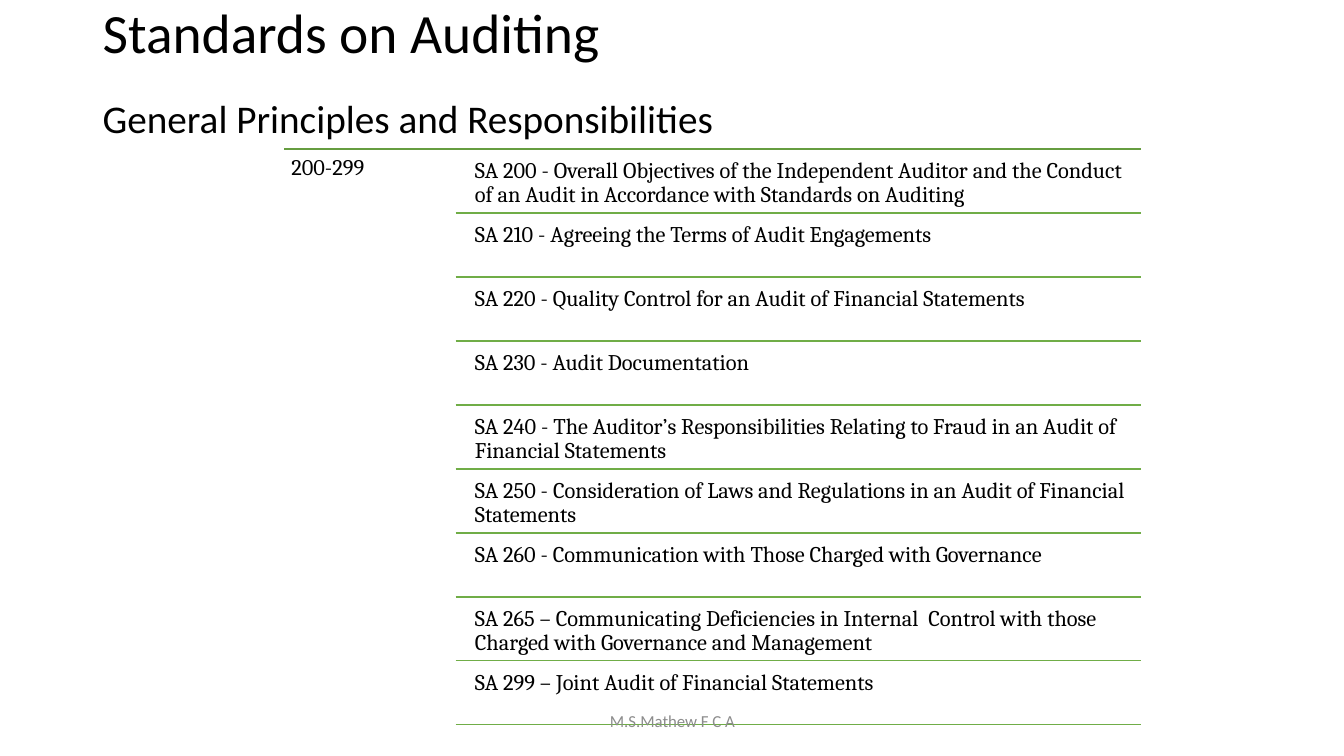
"""Build the slide listing the 200-299 Standards on Auditing."""
from dataclasses import dataclass

from lxml import etree
from pptx import Presentation
from pptx.dml.color import RGBColor
from pptx.enum.shapes import MSO_CONNECTOR
from pptx.enum.text import MSO_ANCHOR, PP_ALIGN
from pptx.oxml.ns import qn
from pptx.util import Emu, Pt

TITLE = "Standards on Auditing"
SUBTITLE = "General Principles and Responsibilities"
SERIES = "200-299"
STANDARDS = [
    "SA 200 - Overall Objectives of the Independent Auditor and the Conduct of an Audit "
    "in Accordance with Standards on Auditing",
    "SA 210 - Agreeing the Terms of Audit Engagements",
    "SA 220 - Quality Control for an Audit of Financial Statements",
    "SA 230 - Audit Documentation",
    "SA 240 - The Auditor’s Responsibilities Relating to Fraud in an Audit of Financial Statements",
    "SA 250 - Consideration of Laws and Regulations in an Audit of Financial Statements",
    "SA 260 - Communication with Those Charged with Governance",
    "SA 265 – Communicating Deficiencies in Internal  Control with those Charged with "
    "Governance and Management",
    "SA 299 – Joint Audit of Financial Statements",
]
FOOTER = "M.S.Mathew F C A"

LEFT, CENTER = PP_ALIGN.LEFT, PP_ALIGN.CENTER
TOP, MIDDLE = MSO_ANCHOR.TOP, MSO_ANCHOR.MIDDLE
STRAIGHT = MSO_CONNECTOR.STRAIGHT

EMU_PER_PX = 9144
SLIDE_WIDTH, SLIDE_HEIGHT = 1333, 750
TITLE_BOX = (92, 15, 1150, 41)
SUBTITLE_BOX = (92, 94, 1150, 635)
FOOTER_BOX = (442, 695, 450, 40)
LIST_LEFT, LIST_RIGHT = 282, 1132
LIST_TOP, LIST_BOTTOM = 148, 719
SERIES_WIDTH = 170
STANDARD_INDENT, STANDARD_GAP, STANDARD_HEIGHT = 12, 3, 60
LIST_INSETS = (7, 7)
DEFAULT_INSETS = (10, 5)


@dataclass(frozen=True)
class Theme:
    """Colours, fonts and type sizes."""
    text: RGBColor = RGBColor(0, 0, 0)
    footer: RGBColor = RGBColor(0x8C, 0x8C, 0x8C)
    top_rule: RGBColor = RGBColor(0x66, 0x9D, 0x40)
    rule: RGBColor = RGBColor(0x70, 0xAD, 0x47)
    heading_font: str = "Calibri"
    list_font: str = "Cambria"
    title_size: float = 39.6
    subtitle_size: int = 28
    list_size: int = 16
    footer_size: int = 12
    rule_width: int = 1
    line_spacing: float = 0.9


THEME = Theme()


def px(length):
    """Turn px into EMU."""
    return Emu(round(length * EMU_PER_PX))


def add_text(slide, box, text, font, size, color=THEME.text, insets=DEFAULT_INSETS,
             anchor=TOP, align=LEFT, spacing=THEME.line_spacing):
    """Add a wrapped text box holding one run."""
    frame = slide.shapes.add_textbox(*map(px, box)).text_frame
    frame.word_wrap = True
    frame.vertical_anchor = anchor
    frame.margin_left = frame.margin_right = px(insets[0])
    frame.margin_top = frame.margin_bottom = px(insets[1])
    paragraph = frame.paragraphs[0]
    paragraph.alignment = align
    paragraph.line_spacing = spacing
    run = paragraph.add_run()
    run.text = text
    run.font.name = font
    run.font.size = Pt(size)
    run.font.color.rgb = color


def add_rule(slide, left, y, color):
    """Add a horizontal rule reaching the right edge of the list."""
    rule = slide.shapes.add_connector(STRAIGHT, px(left), px(y), px(LIST_RIGHT), px(y))
    rule.line.color.rgb = color
    rule.line.width = Pt(THEME.rule_width)
    etree.SubElement(rule.element.spPr, qn("a:effectLst"))


def add_standards(slide):
    """Add the series label and the ruled list of standards."""
    add_rule(slide, LIST_LEFT, LIST_TOP, THEME.top_rule)
    add_text(slide, (LIST_LEFT, LIST_TOP, SERIES_WIDTH, LIST_BOTTOM - LIST_TOP), SERIES,
             THEME.list_font, THEME.list_size, insets=LIST_INSETS)
    rule_left = LIST_LEFT + SERIES_WIDTH
    text_left = rule_left + STANDARD_INDENT
    row_height = (LIST_BOTTOM - LIST_TOP) / len(STANDARDS)
    for index, standard in enumerate(STANDARDS):
        row_top = LIST_TOP + index * row_height
        box = (text_left, row_top + STANDARD_GAP, LIST_RIGHT - text_left, STANDARD_HEIGHT)
        add_text(slide, box, standard, THEME.list_font, THEME.list_size, insets=LIST_INSETS)
        add_rule(slide, rule_left, row_top + row_height, THEME.rule)


def main():
    """Assemble and save the presentation."""
    presentation = Presentation()
    presentation.slide_width = px(SLIDE_WIDTH)
    presentation.slide_height = px(SLIDE_HEIGHT)
    slide = presentation.slides.add_slide(presentation.slide_layouts[6])
    add_text(slide, TITLE_BOX, TITLE, THEME.heading_font, THEME.title_size, anchor=MIDDLE)
    add_text(slide, SUBTITLE_BOX, SUBTITLE, THEME.heading_font, THEME.subtitle_size)
    add_standards(slide)
    add_text(slide, FOOTER_BOX, FOOTER, THEME.heading_font, THEME.footer_size, THEME.footer,
             anchor=MIDDLE, align=CENTER, spacing=1.0)
    presentation.save("out.pptx")


if __name__ == "__main__":
    main()
